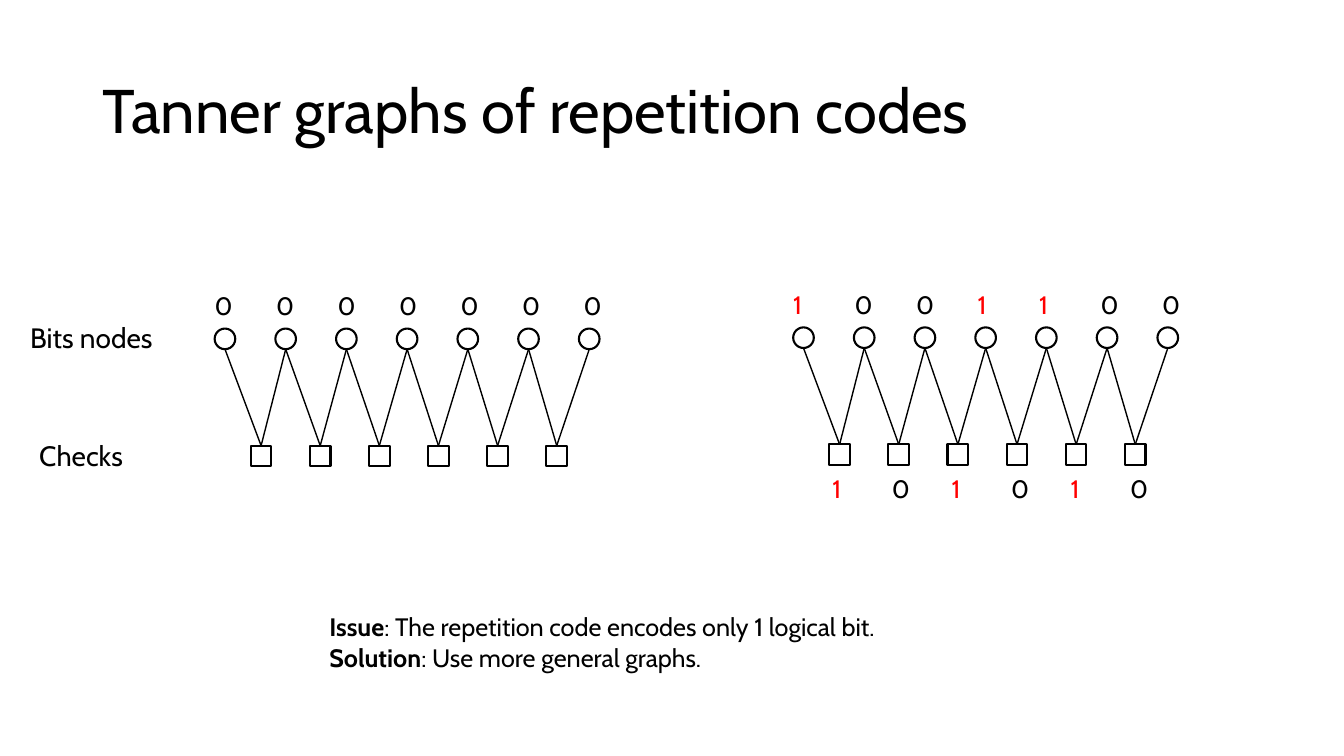
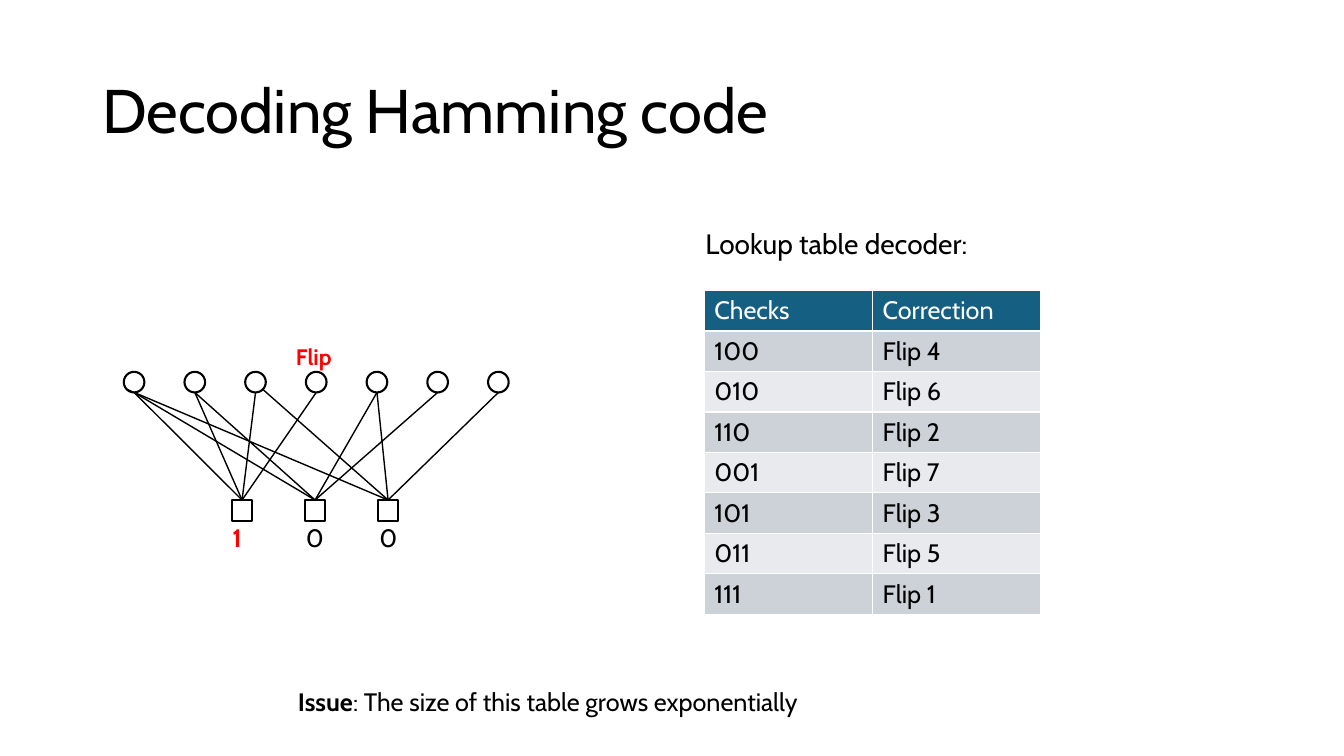
from itertools import pairwise

from lxml.etree import SubElement
from pptx import Presentation
from pptx.dml.color import RGBColor
from pptx.enum.shapes import MSO_CONNECTOR, MSO_SHAPE
from pptx.enum.text import MSO_ANCHOR
from pptx.oxml.ns import qn
from pptx.util import Cm, Pt

FONT = "Cabin"
BLACK, WHITE, RED = "000000", "FFFFFF", "FF0000"
HEADER_FILL, ROW_FILLS = "156082", ("CCD2D8", "E8EAED")

# All positions and sizes are in centimetres.
NODE = 0.52
BIT_PITCH = 1.53
LABEL_WIDTH, LABEL_HEIGHT = 0.85, 1.02
BIT_COUNT = 7

# Where an edge leaves a bit circle, as fractions of its width and height.
BOTTOM, BOTTOM_LEFT, BOTTOM_RIGHT = (0.5, 1), (0.15, 0.85), (0.85, 0.85)

CHAIN_EDGES = [(check, bit, BOTTOM)
               for check, bits in enumerate(pairwise(range(BIT_COUNT)))
               for bit in bits]
CHAIN_CHECKS = {"count": 6, "offset": (0.91, 2.95), "pitch": 1.49,
                "label_offset": (0.74, 3.56), "label_pitch": 1.5}

HAMMING_EDGES = [
    (0, 0, BOTTOM), (0, 1, BOTTOM), (0, 2, BOTTOM), (0, 3, BOTTOM),
    (1, 0, BOTTOM), (1, 1, BOTTOM), (1, 4, BOTTOM), (1, 5, BOTTOM),
    (2, 0, BOTTOM_LEFT), (2, 2, BOTTOM_RIGHT), (2, 4, BOTTOM), (2, 6, BOTTOM),
]
HAMMING_CHECKS = {"count": 3, "offset": (2.72, 3.23), "pitch": 1.84,
                  "label_offset": (2.49, 3.66), "label_pitch": 1.85}

LOOKUP_TABLE = [
    ("Checks", "Correction"),
    ("100", "Flip 4"),
    ("010", "Flip 6"),
    ("110", "Flip 2"),
    ("001", "Flip 7"),
    ("101", "Flip 3"),
    ("011", "Flip 5"),
    ("111", "Flip 1"),
]

NOTE = {"size": 18}
HEADING = {"size": 20}
FLIP = {"size": 16, "color": RED, "bold": True}

# A text is (place, paragraphs, format); a paragraph lists (words, bold) spans.
PAGES = [
    {
        "title": "Tanner graphs of repetition codes",
        "graphs": [
            {"at": (5.41, 8.28), "checks": CHAIN_CHECKS, "edges": CHAIN_EDGES,
             "bit_labels": "0000000", "check_labels": ""},
            {"at": (19.99, 8.25), "checks": CHAIN_CHECKS, "edges": CHAIN_EDGES,
             "bit_labels": "1001100", "check_labels": "101010"},
        ],
        "texts": [
            ((0.51, 7.95, 4.09, 1.12), [[("Bits nodes", False)]], HEADING),
            ((0.74, 10.92, 4.72, 1.12), [[("Checks", False)]], HEADING),
            ((8.05, 15.29, 15.32, 1.8),
             [[("Issue", True),
               (": The repetition code encodes only 1 logical bit.", False)],
              [("Solution", True), (": Use more general graphs.", False)]],
             NOTE),
        ],
    },
    {
        "title": "Decoding Hamming code",
        "graphs": [
            {"at": (3.12, 9.37), "checks": HAMMING_CHECKS,
             "edges": HAMMING_EDGES, "bit_labels": "", "check_labels": "100",
             "bold_ones": True},
        ],
        "texts": [
            ((7.21, 8.51, 1.55, 0.94), [[("Flip", True)]], FLIP),
            ((17.53, 5.59, 7.92, 1.12),
             [[("Lookup table decoder:", False)]], HEADING),
            ((7.26, 17.17, 13.54, 1.02),
             [[("Issue", True),
               (": The size of this table grows exponentially", False)]],
             NOTE),
        ],
        "table": {"at": (17.75, 7.32), "column": 4.24, "row": 1.02,
                  "rows": LOOKUP_TABLE},
    },
]


def rgb(color):
    return RGBColor.from_string(color)


def style_span(span, size=18, color=BLACK, bold=False):
    formats = {"name": FONT, "size": Pt(size), "bold": bold}
    for name, value in formats.items():
        setattr(span.font, name, value)
    span.font.color.rgb = rgb(color)


def add_text(shapes, place, paragraphs, size=18, color=BLACK, bold=False):
    """Add a text box; bold applies to every span, on top of its own flag."""
    box = shapes.add_textbox(*map(Cm, place))
    frame = box.text_frame
    frame.word_wrap = True
    for index, spans in enumerate(paragraphs):
        para = frame.add_paragraph() if index else frame.paragraphs[0]
        for words, strong in spans:
            span = para.add_run()
            span.text = words
            style_span(span, size, color, bold or strong)
    return box


def add_title(page, words):
    box = add_text(page.shapes, (2.33, 1.01, 29.21, 3.68),
                   [[(words, False)]], size=44)
    box.text_frame.vertical_anchor = MSO_ANCHOR.MIDDLE
    box.text_frame.paragraphs[0].line_spacing = 0.9


def add_nodes(shapes, kind, left, top, pitch, count):
    nodes = []
    for index in range(count):
        node = shapes.add_shape(kind, Cm(left + index * pitch), Cm(top),
                                Cm(NODE), Cm(NODE))
        node.shadow.inherit = False
        node.fill.solid()
        node.fill.fore_color.rgb = rgb(WHITE)
        node.line.color.rgb = rgb(BLACK)
        node.line.width = Pt(1.5)
        nodes.append(node)
    return nodes


def add_edge(shapes, check, bit, exit_point):
    across, down = exit_point
    edge = shapes.add_connector(
        MSO_CONNECTOR.STRAIGHT, check.left, check.top,
        bit.left + round(across * bit.width),
        bit.top + round(down * bit.height))
    edge.begin_connect(check, 0)
    edge.line.color.rgb = rgb(BLACK)
    edge.line.width = Pt(1)
    SubElement(edge.element.spPr, qn("a:effectLst"))


def add_labels(shapes, digits, left, top, pitch, bold_ones):
    """Write one digit per node, each 1 in red."""
    for index, digit in enumerate(digits):
        is_one = digit == "1"
        add_text(shapes,
                 (left + index * pitch, top, LABEL_WIDTH, LABEL_HEIGHT),
                 [[(digit, False)]], color=RED if is_one else BLACK,
                 bold=is_one and bold_ones)


def add_graph(page, graph):
    shapes = page.shapes.add_group_shape().shapes
    left, top = graph["at"]
    layout = graph["checks"]
    check_x, check_y = layout["offset"]
    label_x, label_y = layout["label_offset"]
    bold_ones = graph.get("bold_ones", False)

    bits = add_nodes(shapes, MSO_SHAPE.OVAL, left, top, BIT_PITCH, BIT_COUNT)
    checks = add_nodes(shapes, MSO_SHAPE.RECTANGLE, left + check_x,
                       top + check_y, layout["pitch"], layout["count"])
    for check, bit, exit_point in graph["edges"]:
        add_edge(shapes, checks[check], bits[bit], exit_point)
    add_labels(shapes, graph["bit_labels"], left - 0.25, top - 1.09, 1.55,
               bold_ones)
    add_labels(shapes, graph["check_labels"], left + label_x, top + label_y,
               layout["label_pitch"], bold_ones)


def add_lookup_table(page, spec_values):
    rows = spec_values["rows"]
    left, top = spec_values["at"]
    column_width, row_height = spec_values["column"], spec_values["row"]
    column_count = len(rows[0])
    table = page.shapes.add_table(
        len(rows), column_count, Cm(left), Cm(top),
        Cm(column_width * column_count), Cm(row_height * len(rows))).table
    for row_index, row in enumerate(rows):
        is_header = row_index == 0
        fill = HEADER_FILL if is_header else ROW_FILLS[(row_index - 1) % 2]
        for column_index, words in enumerate(row):
            cell = table.cell(row_index, column_index)
            cell.fill.solid()
            cell.fill.fore_color.rgb = rgb(fill)
            span = cell.text_frame.paragraphs[0].add_run()
            span.text = words
            style_span(span, color=WHITE if is_header else BLACK)


def main():
    deck = Presentation()
    deck.slide_width, deck.slide_height = Cm(33.87), Cm(19.05)
    blank = deck.slide_layouts[6]
    for content in PAGES:
        page = deck.slides.add_slide(blank)
        add_title(page, content["title"])
        for graph in content["graphs"]:
            add_graph(page, graph)
        for place, paragraphs, formats in content["texts"]:
            add_text(page.shapes, place, paragraphs, **formats)
        if "table" in content:
            add_lookup_table(page, content["table"])
    deck.save("out.pptx")


if __name__ == "__main__":
    main()
